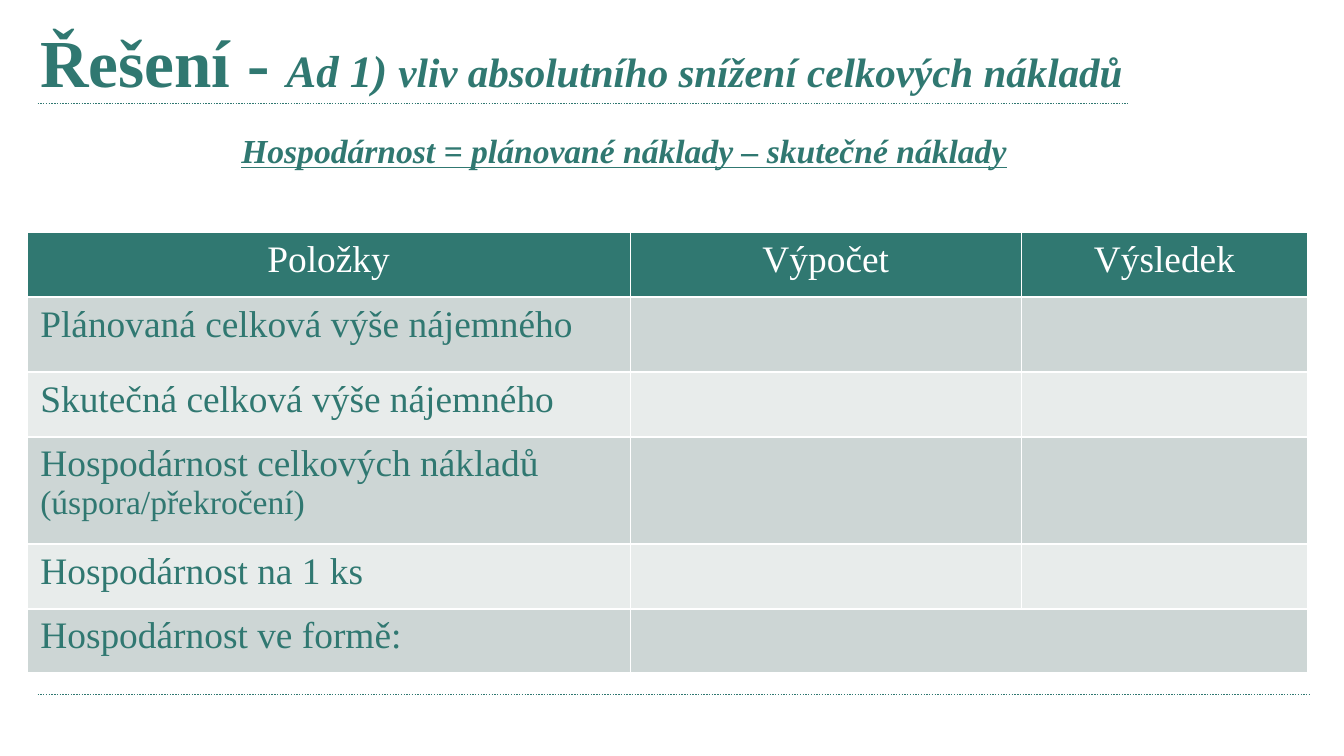
"""Build a slide with a cost-efficiency heading, formula and calculation table."""
from dataclasses import dataclass
from lxml.etree import SubElement
from pptx import Presentation
from pptx.dml.color import RGBColor
from pptx.enum.dml import MSO_LINE
from pptx.enum.shapes import MSO_CONNECTOR
from pptx.enum.text import MSO_ANCHOR, PP_ALIGN
from pptx.oxml.ns import qn
from pptx.util import Inches, Pt


@dataclass(frozen=True)
class Theme:
    face: str = "Times New Roman"
    teal: str = "307871"
    white: str = "FFFFFF"
    bands: tuple = ("CDD6D5", "E8ECEB")
    title: int = 36
    case: int = 24
    subtitle: int = 22
    body: int = 20
    small: int = 18


def write(p, runs, color, align=PP_ALIGN.LEFT):
    p.alignment = align
    for text, fmt in runs:
        r = p.add_run()
        r.text = text
        r.font.color.rgb = RGBColor.from_string(color)
        for name, value in {"name": T.face, **fmt}.items():
            setattr(r.font, name, value)


def add_borders(cell, color):
    tc_pr = cell._tc.get_or_add_tcPr()
    for side in ("lnL", "lnR", "lnT", "lnB"):
        ln = SubElement(tc_pr, qn(f"a:{side}"), w=str(Pt(1)))
        SubElement(SubElement(ln, qn("a:solidFill")), qn("a:srgbClr"), val=color)


T = Theme()
prs = Presentation()
prs.slide_width = Inches(10)
prs.slide_height = prs.slide_width * 9 // 16
s = prs.slides.add_slide(prs.slide_layouts[6])

for right, y in ((8.39, 0.77), (9.75, 5.17)):
    rule = s.shapes.add_connector(
        MSO_CONNECTOR.STRAIGHT, Inches(0.28), Inches(y), Inches(right), Inches(y))
    rule.line.color.rgb = RGBColor.from_string(T.teal)
    rule.line.width = Pt(0.75)
    rule.line.dash_style = MSO_LINE.ROUND_DOT
    SubElement(rule._element.spPr, qn("a:effectLst"))

bold = {"bold": True}
slanted = {"bold": True, "italic": True}
headings = (
    ((0.2, 0.1, 8.82, 0.79), PP_ALIGN.LEFT, (
        ("Řešení - ", {**bold, "size": Pt(T.title)}),
        ("Ad 1) ", {**slanted, "size": Pt(T.case)}),
        ("vliv absolutního snížení celkových nákladů", {**slanted, "size": Pt(T.subtitle)}))),
    ((0.43, 0.92, 8.43, 0.4), PP_ALIGN.CENTER, (
        ("Hospodárnost = plánované náklady – skutečné náklady",
         {**slanted, "underline": True, "size": Pt(T.small)}),)),
)
for box, align, runs in headings:
    tf = s.shapes.add_textbox(*map(Inches, box)).text_frame
    for name, value in {"word_wrap": True, "vertical_anchor": MSO_ANCHOR.TOP}.items():
        setattr(tf, name, value)
    write(tf.paragraphs[0], runs, T.teal, align)

body = {"size": Pt(T.body)}
header = ("Položky", "Výpočet", "Výsledek")
items = (
    (PP_ALIGN.JUSTIFY, [("Plánovaná celková výše nájemného", body)]),
    (PP_ALIGN.JUSTIFY, [("Skutečná celková výše nájemného", body)]),
    (PP_ALIGN.LEFT, [("Hospodárnost celkových nákladů ", body),
                     ("(úspora/překročení)", {"size": Pt(T.small)})]),
    (PP_ALIGN.LEFT, [("Hospodárnost na 1 ks", body)]),
    (PP_ALIGN.LEFT, [("Hospodárnost ve formě:", body)]),
)
cols = (4.49, 2.91, 2.13)
rows = (0.48, 0.56, 0.48, 0.8, 0.48, 0.48)
table = s.shapes.add_table(
    len(rows), len(cols), Inches(0.2), Inches(1.73),
    Inches(sum(cols)), Inches(sum(rows))).table
for col, width in zip(table.columns, cols):
    col.width = Inches(width)
for i, height in enumerate(rows):
    table.rows[i].height = Inches(height)
    fill = T.bands[(i - 1) % 2] if i else T.teal
    for j in range(len(cols)):
        cell = table.cell(i, j)
        add_borders(cell, T.white)
        cell.fill.solid()
        cell.fill.fore_color.rgb = RGBColor.from_string(fill)
for j, text in enumerate(header):
    write(table.cell(0, j).text_frame.paragraphs[0], [(text, {**body, "bold": False})],
          T.white, PP_ALIGN.CENTER)
for i, (align, runs) in enumerate(items, 1):
    write(table.cell(i, 0).text_frame.paragraphs[0], runs, T.teal, align)
table.cell(len(items), 1).merge(table.cell(len(items), 2))

prs.save("out.pptx")
